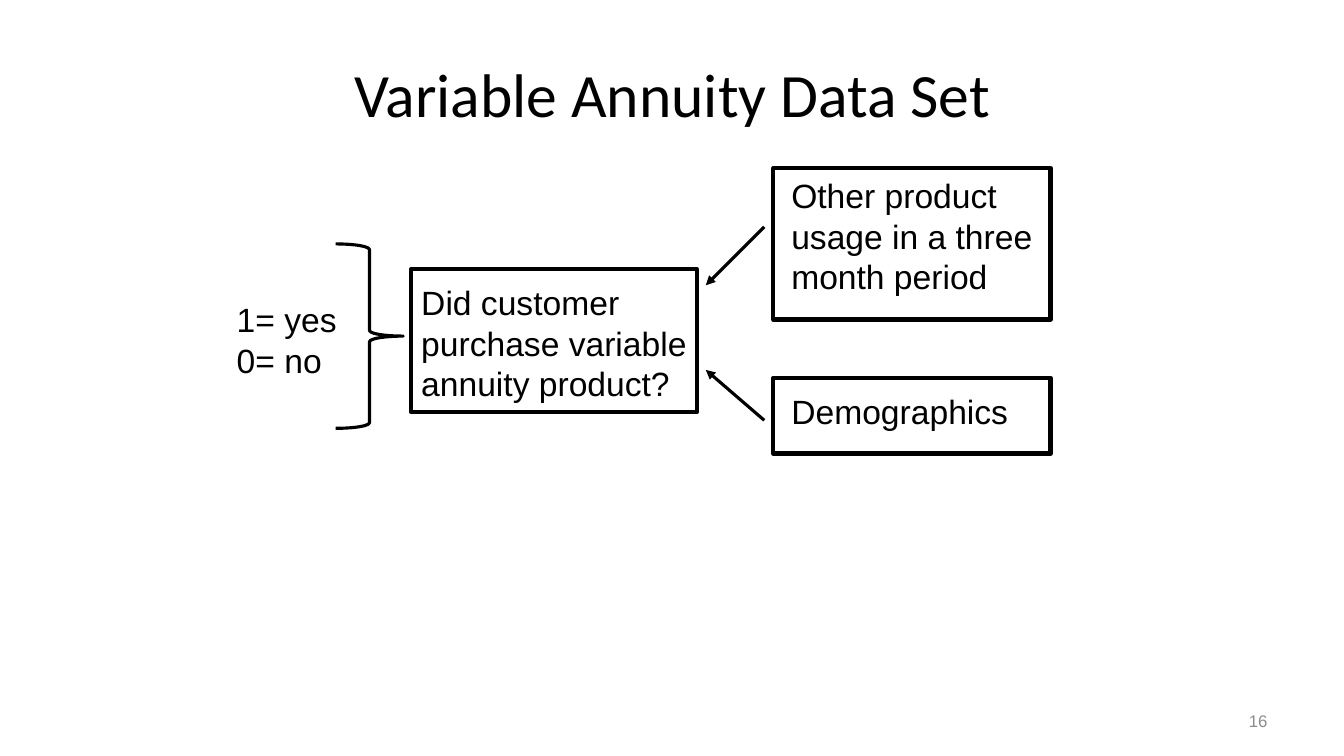
import lxml.etree
import pptx
import pptx.dml.color
import pptx.enum.shapes
import pptx.enum.text
import pptx.oxml.ns
import pptx.util

Inches = pptx.util.Inches
Shapes = pptx.enum.shapes.MSO_SHAPE
Align = pptx.enum.text.PP_ALIGN
Anchor = pptx.enum.text.MSO_ANCHOR
BLACK = "000000"
WHITE = "FFFFFF"
GRAY = "8C8C8C"


def color(value):
    return pptx.dml.color.RGBColor.from_string(value)


def set_line(line, width):
    line.color.rgb = color(BLACK)
    line.width = pptx.util.Pt(width)


def write_text(shape, lines, size, font="Arial", text_color=BLACK,
               align=Align.LEFT, anchor=Anchor.TOP):
    frame = shape.text_frame
    frame.word_wrap = True
    frame.vertical_anchor = anchor
    frame.text = "\n".join(lines)
    for paragraph in frame.paragraphs:
        paragraph.alignment = align
        paragraph.font.size = pptx.util.Pt(size)
        paragraph.font.name = font
        paragraph.font.color.rgb = color(text_color)


def add_title(slide, text):
    title = slide.shapes.title
    title.left, title.top = Inches(0.67), Inches(0.3)
    title.width, title.height = Inches(12), Inches(1.25)
    write_text(title, [text], 44, "Calibri", align=Align.CENTER, anchor=Anchor.MIDDLE)


def add_text(slide, place, lines, size=24, **style):
    box = slide.shapes.add_textbox(*map(Inches, place))
    write_text(box, lines, size, **style)


def add_outline(slide, kind, place, width):
    shape = slide.shapes.add_shape(kind, *map(Inches, place))
    shape.shadow.inherit = False
    set_line(shape.line, width)
    return shape


def add_box(slide, place, text_place, text):
    box = add_outline(slide, Shapes.RECTANGLE, place, 3)
    box.fill.solid()
    box.fill.fore_color.rgb = color(WHITE)
    add_text(slide, text_place, [text])


def add_brace(slide, place):
    brace = add_outline(slide, Shapes.RIGHT_BRACE, place, 2.25)
    brace.fill.background()
    brace.adjustments[0] = 0.083
    brace.adjustments[1] = 0.5


def add_arrow(slide, start, end):
    arrow = slide.shapes.add_connector(
        pptx.enum.shapes.MSO_CONNECTOR.STRAIGHT, *map(Inches, start + end))
    set_line(arrow.line, 2.25)
    qn = pptx.oxml.ns.qn
    lxml.etree.SubElement(arrow.line._get_or_add_ln(), qn("a:tailEnd"), type="triangle")
    lxml.etree.SubElement(arrow._element.spPr, qn("a:effectLst"))


def main():
    presentation = pptx.Presentation()
    presentation.slide_width = Inches(13.33)
    presentation.slide_height = Inches(7.5)
    slide = presentation.slides.add_slide(presentation.slide_layouts[5])

    add_title(slide, "Variable Annuity Data Set")
    add_text(slide, (9.56, 6.95, 3.11, 0.4), ["16"], 12, text_color=GRAY,
             align=Align.RIGHT, anchor=Anchor.MIDDLE)

    add_box(slide, (7.67, 1.67, 2.75, 1.5), (7.75, 1.69, 2.67, 1.31),
            "Other product usage in a three month period")
    add_box(slide, (7.67, 3.75, 2.75, 0.75), (7.75, 3.83, 2.42, 0.51),
            "Demographics")
    add_box(slide, (4.08, 2.67, 2.83, 1.42), (4.08, 2.75, 3, 1.31),
            "Did customer purchase variable annuity product?")

    add_brace(slide, (3.33, 2.42, 0.67, 1.83))
    add_text(slide, (2.25, 2.92, 1.33, 0.91), ["1= yes", "0= no"])

    add_arrow(slide, (7.58, 2.25), (7, 2.83))
    add_arrow(slide, (7.58, 4.17), (7, 3.67))

    presentation.save("out.pptx")


if __name__ == "__main__":
    main()
